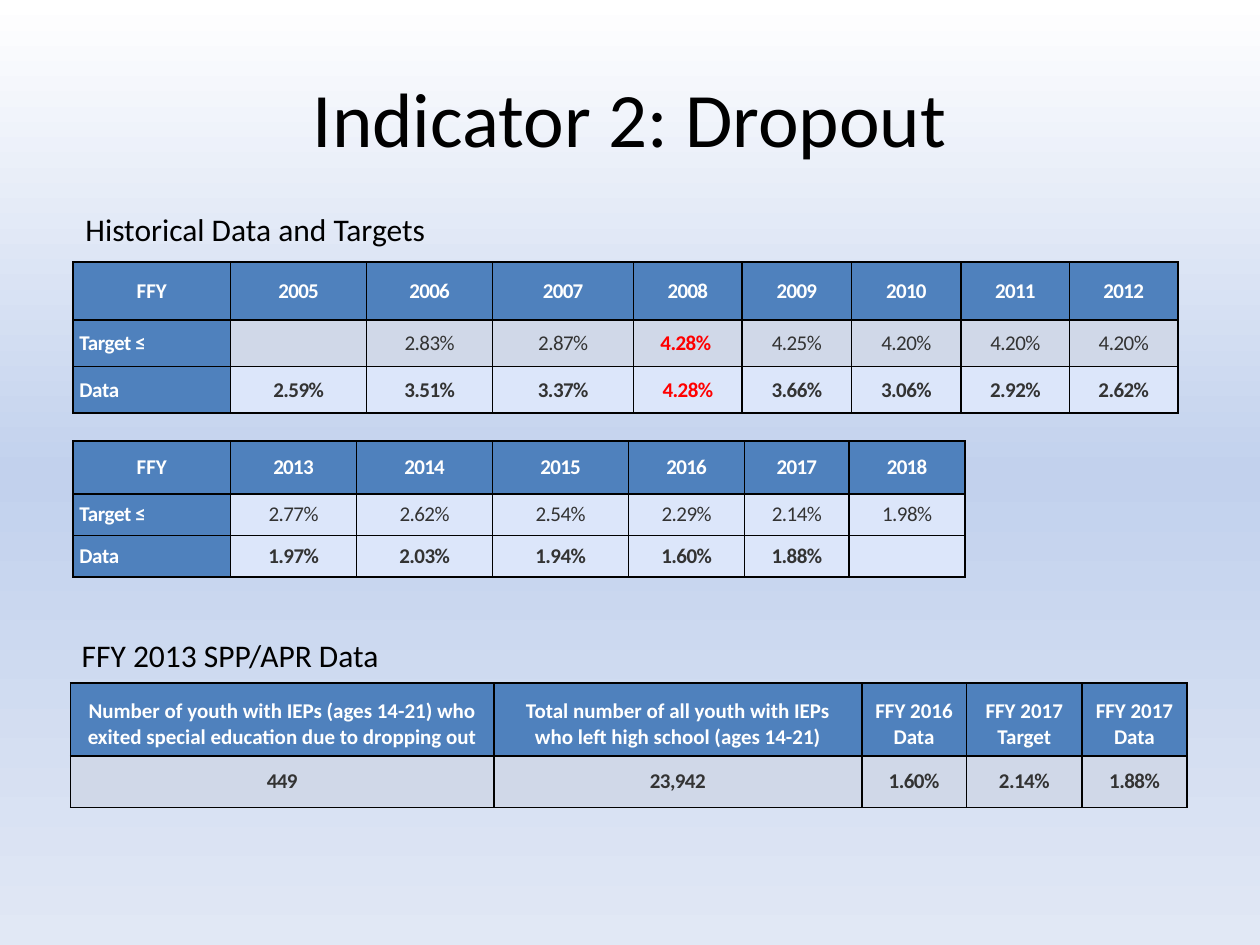
from dataclasses import dataclass
from typing import Any

from lxml import etree
from pptx import Presentation
from pptx import util as u
from pptx.dml.color import RGBColor
from pptx.enum import text
from pptx.oxml import ns, parse_xml

HEADER, GREY, PALE = "4F81BD", "D0D8E8", "DCE6FA"
WHITE, BLACK, DARK, RED = "FFFFFF", "000000", "333333", "FF0000"


def color(value):
    return RGBColor.from_string(value)


@dataclass
class SlideWriter:
    """Hold the slide style and draw each kind of element on the current slide."""

    page: Any
    font: str = "Calibri"
    cell_size: float = 12
    border: float = 1

    def background(self, stops):
        fill = self.page.background.fill
        fill.gradient()
        items = "".join(
            f'<a:gs pos="{position * 1000}"><a:srgbClr val="{value}"/></a:gs>'
            for position, value in stops
        )
        gradient = parse_xml(
            f'<a:gradFill {ns.nsdecls("a")} rotWithShape="1"><a:gsLst>{items}</a:gsLst>'
            '<a:lin ang="5400000" scaled="0"/></a:gradFill>'
        )
        properties = self.page._element.find(".//" + ns.qn("p:bgPr"))
        properties.replace(properties.find(ns.qn("a:gradFill")), gradient)

    def span(self, para, words, size, shade=BLACK, bold=False, spacing=0):
        run = para.add_run()
        run.text = words
        run.font.name = self.font
        run.font.size = u.Pt(size)
        run.font.bold = bold
        run.font.color.rgb = color(shade)
        if spacing:
            run._r.get_or_add_rPr().set("spc", str(round(spacing * 100)))

    def title(self, words, left, top, width, height):
        box = self.page.shapes.title
        box.left, box.top = u.Inches(left), u.Inches(top)
        box.width, box.height = u.Inches(width), u.Inches(height)
        box.text_frame.vertical_anchor = text.MSO_ANCHOR.MIDDLE
        para = box.text_frame.paragraphs[0]
        para.alignment = text.PP_ALIGN.CENTER
        self.span(para, words, 44)

    def heading(self, words, left, top):
        box = self.page.shapes.add_textbox(
            u.Inches(left), u.Inches(top), u.Inches(5.08), u.Inches(0.4)
        )
        box.text_frame.word_wrap = True
        self.span(box.text_frame.paragraphs[0], words, 18)

    def table(self, left, top, widths, heights, rows):
        frame = self.page.shapes.add_table(
            len(rows), len(widths), u.Inches(left), u.Inches(top),
            u.Inches(sum(widths)), u.Inches(sum(heights)),
        )
        grid = frame.table
        for column, width in zip(grid.columns, widths):
            column.width = u.Inches(width)
        for line, height in zip(grid.rows, heights):
            line.height = u.Inches(height)
        for r, row in enumerate(rows):
            for c, words in enumerate(row):
                yield grid.cell(r, c), r, c, words

    def cell(self, cell, fill, lines, shade, bold, spacing, label=False, padded=False):
        properties = cell._tc.get_or_add_tcPr()
        for side in ("lnL", "lnR", "lnT", "lnB"):
            line = etree.SubElement(properties, ns.qn(f"a:{side}"), w=str(u.Pt(self.border)))
            solid = etree.SubElement(line, ns.qn("a:solidFill"))
            etree.SubElement(solid, ns.qn("a:srgbClr"), val=BLACK)
        cell.fill.solid()
        cell.fill.fore_color.rgb = color(fill)
        cell.vertical_anchor = text.MSO_ANCHOR.BOTTOM if padded else text.MSO_ANCHOR.MIDDLE
        if not padded:
            cell.margin_right = cell.margin_top = cell.margin_bottom = 0
            cell.margin_left = u.Inches(0.05 if label else 0)
        for index, words in enumerate(lines):
            frame = cell.text_frame
            para = frame.add_paragraph() if index else frame.paragraphs[0]
            para.alignment = text.PP_ALIGN.LEFT if label else text.PP_ALIGN.CENTER
            if not padded:
                para.space_before = u.Pt(3.8)
            para.font.size = u.Pt(self.cell_size)
            if words:
                self.span(para, words, self.cell_size, shade, bold, spacing)

    def yearly_table(self, left, top, widths, heights, rows, target_fill):
        fills = (HEADER, target_fill, PALE)
        for cell, r, c, words in self.table(left, top, widths, heights, rows):
            if r == 0 or c == 0:
                spacing = -0.2 if r else -0.4 if c else 0
                self.cell(cell, HEADER, [words], WHITE, True, spacing, label=r > 0)
            else:
                missed = words.startswith("4.28%")
                shade = RED if missed else DARK
                self.cell(cell, fills[r], [words], shade, missed or r == 2, -0.3)

    def summary_table(self, left, top, widths, heights, rows):
        for cell, r, _, words in self.table(left, top, widths, heights, rows):
            if r == 0:
                self.cell(cell, HEADER, words.split("\n"), WHITE, True, 0, padded=True)
            else:
                self.cell(cell, GREY, [words], DARK, True, -0.3)


def main():
    deck = Presentation()
    deck.slide_width, deck.slide_height = u.Inches(10), u.Inches(7.5)
    writer = SlideWriter(deck.slides.add_slide(deck.slide_layouts[5]))
    writer.background([(0, "FFFFFF"), (50, "C2D1ED"), (100, "E1E8F5")])
    writer.title("Indicator 2: Dropout", 0.5, 0.3, 9, 1.25)

    writer.heading("Historical Data and Targets", 0.58, 1.62)
    writer.yearly_table(
        0.58, 2.08,
        [1.25, 1.08, 1, 1.12, 0.86, 0.87, 0.87, 0.86, 0.86],
        [0.46, 0.37, 0.37],
        [
            ["FFY", *map(str, range(2005, 2013))],
            ["Target ≤", "", "2.83%", "2.87%", "4.28% ", "4.25%", "4.20%", "4.20%", "4.20%"],
            ["Data", "2.59%", "3.51%", "3.37%", "4.28%", "3.66%", "3.06%", "2.92%", "2.62%"],
        ],
        GREY,
    )
    writer.yearly_table(
        0.58, 3.5,
        [1.25, 1, 1.08, 1.08, 0.92, 0.83, 0.92],
        [0.42, 0.33, 0.33],
        [
            ["FFY", *map(str, range(2013, 2019))],
            ["Target ≤", "2.77%", "2.62%", "2.54%", "2.29%", "2.14%", "1.98%"],
            ["Data", "1.97%", "2.03%", "1.94%", "1.60%", "1.88%", ""],
        ],
        PALE,
    )

    writer.heading("FFY 2013 SPP/APR Data", 0.55, 5)
    writer.summary_table(
        0.56, 5.42,
        [3.36, 2.92, 0.83, 0.92, 0.83],
        [0.58, 0.41],
        [
            [
                "Number of youth with IEPs (ages 14-21) who exited special education "
                "due to dropping out",
                "Total number of all youth with IEPs who left high school (ages 14-21)",
                "FFY 2016\nData", "FFY 2017\nTarget", "FFY 2017\nData",
            ],
            ["449", "23,942", "1.60%", "2.14%", "1.88%"],
        ],
    )
    deck.save("out.pptx")


if __name__ == "__main__":
    main()
